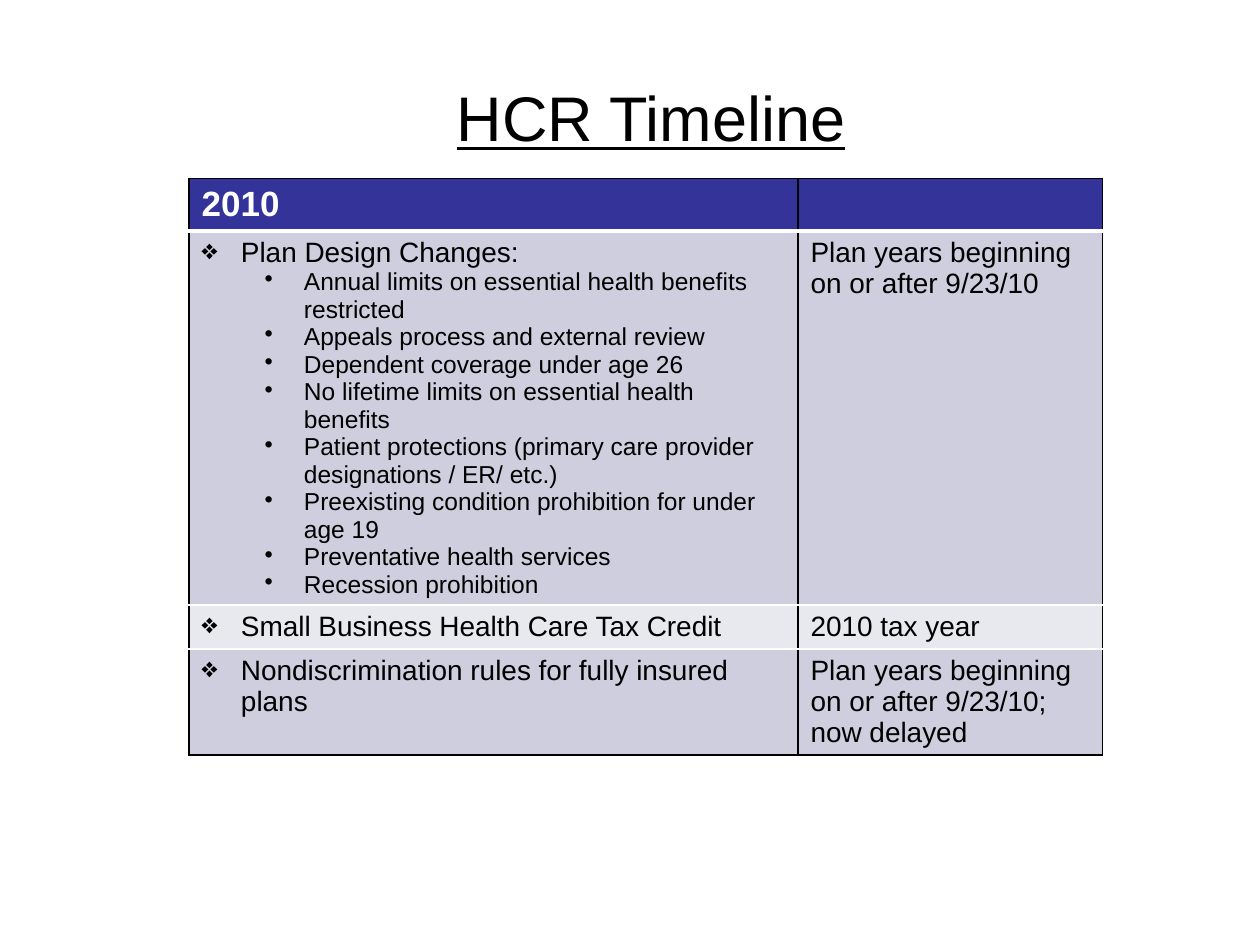
from dataclasses import dataclass
from typing import Optional

from pptx import Presentation
from pptx import util as u
from pptx.dml import color
from pptx.enum import text
from pptx.oxml import ns, xmlchemy


@dataclass(frozen=True)
class Theme:
    font: str = "Arial"
    black: str = "000000"
    white: str = "FFFFFF"
    header: str = "333399"
    band_dark: str = "CECEDE"
    band_light: str = "E8E8EF"
    title_size: int = 36
    header_size: int = 20
    body_size: int = 16
    detail_size: int = 14


THEME = Theme()


@dataclass(frozen=True)
class Bullet:
    symbol: str
    indent: float
    level: int = 0
    hanging: float = 22.5


TOPIC = Bullet("❖", 22.5)
DETAIL = Bullet("•", 58.5, level=1)


@dataclass(frozen=True)
class TimelineRow:
    topic: str
    effective: str
    height: float
    fill: str
    details: tuple[str, ...] = ()


ROWS = (
    TimelineRow(
        "Plan Design Changes:",
        "Plan years beginning on or after 9/23/10",
        213,
        THEME.band_dark,
        (
            "Annual limits on essential health benefits restricted",
            "Appeals process and external review",
            "Dependent coverage under age 26",
            "No lifetime limits on essential health benefits",
            "Patient protections (primary care provider designations / ER/ etc.)",
            "Preexisting condition prohibition for under age 19",
            "Preventative health services",
            "Recession prohibition",
        ),
    ),
    TimelineRow("Small Business Health Care Tax Credit", "2010 tax year",
                25, THEME.band_light),
    TimelineRow("Nondiscrimination rules for fully insured plans",
                "Plan years beginning on or after 9/23/10; now delayed",
                60, THEME.band_dark),
)
HEADER_HEIGHT = 30
COLUMN_WIDTHS = (348, 174)


def add_bullet(para, bullet: Bullet) -> None:
    para.level = bullet.level
    properties = para._p.get_or_add_pPr()
    properties.set("marL", str(u.Pt(bullet.indent)))
    properties.set("indent", str(-u.Pt(bullet.hanging)))
    mark = xmlchemy.OxmlElement("a:buChar")
    mark.set("char", bullet.symbol)
    properties.append(mark)


def write(frame, words: str, *, size: int, ink: str = THEME.black,
          bold: bool = False, underline: bool = False,
          align: text.PP_ALIGN = text.PP_ALIGN.LEFT,
          bullet: Optional[Bullet] = None) -> None:
    first = frame.paragraphs[0]
    para = frame.add_paragraph() if first.runs else first
    if bullet:
        add_bullet(para, bullet)
    para.alignment = align
    span = para.add_run()
    span.text = words
    span.font.name = THEME.font
    span.font.size = u.Pt(size)
    span.font.bold = bold
    span.font.underline = underline
    span.font.color.rgb = color.RGBColor.from_string(ink)


def add_border(cell, side: str, ink: str, width: float) -> None:
    line = xmlchemy.OxmlElement(f"a:ln{side}")
    line.set("w", str(u.Pt(width)))
    fill = xmlchemy.OxmlElement("a:solidFill")
    shade = xmlchemy.OxmlElement("a:srgbClr")
    shade.set("val", ink)
    fill.append(shade)
    line.append(fill)
    cell._tc.get_or_add_tcPr().append(line)


def style_cell(cell, fill: str, *, top: str = THEME.white,
               bottom: str = THEME.white, bottom_width: float = 1) -> None:
    add_border(cell, "L", THEME.black, 1)
    add_border(cell, "R", THEME.black, 1)
    add_border(cell, "T", top, 1)
    add_border(cell, "B", bottom, bottom_width)
    cell.fill.solid()
    cell.fill.fore_color.rgb = color.RGBColor.from_string(fill)


def add_title(page) -> None:
    box = page.shapes.title
    box.left, box.top, box.width, box.height = map(u.Pt, (48, 21.6, 648, 90))
    box.text_frame.vertical_anchor = text.MSO_ANCHOR.MIDDLE
    write(box.text_frame, "HCR Timeline", size=THEME.title_size,
          underline=True, align=text.PP_ALIGN.CENTER)


def add_timeline(page) -> None:
    heights = (HEADER_HEIGHT, *(row.height for row in ROWS))
    table = page.shapes.add_table(
        len(heights), len(COLUMN_WIDTHS), u.Pt(108), u.Pt(102),
        u.Pt(sum(COLUMN_WIDTHS)), u.Pt(sum(heights))).table
    for column, width in zip(table.columns, COLUMN_WIDTHS):
        column.width = u.Pt(width)
    for table_row, height in zip(table.rows, heights):
        table_row.height = u.Pt(height)

    for cell in table.rows[0].cells:
        style_cell(cell, THEME.header, top=THEME.black, bottom_width=3)
    write(table.cell(0, 0).text_frame, "2010", size=THEME.header_size,
          ink=THEME.white, bold=True)

    for index, row in enumerate(ROWS, start=1):
        bottom = THEME.black if index == len(ROWS) else THEME.white
        topic_cell, date_cell = table.rows[index].cells
        for cell in (topic_cell, date_cell):
            style_cell(cell, row.fill, bottom=bottom)
        write(topic_cell.text_frame, row.topic, size=THEME.body_size, bullet=TOPIC)
        for detail in row.details:
            write(topic_cell.text_frame, detail, size=THEME.detail_size, bullet=DETAIL)
        write(date_cell.text_frame, row.effective, size=THEME.body_size)


def main() -> None:
    deck = Presentation()
    deck.slide_width, deck.slide_height = u.Pt(720), u.Pt(540)
    page = deck.slides.add_slide(deck.slide_layouts.get_by_name("Title Only"))
    add_title(page)
    add_timeline(page)
    deck.save("out.pptx")


if __name__ == "__main__":
    main()
